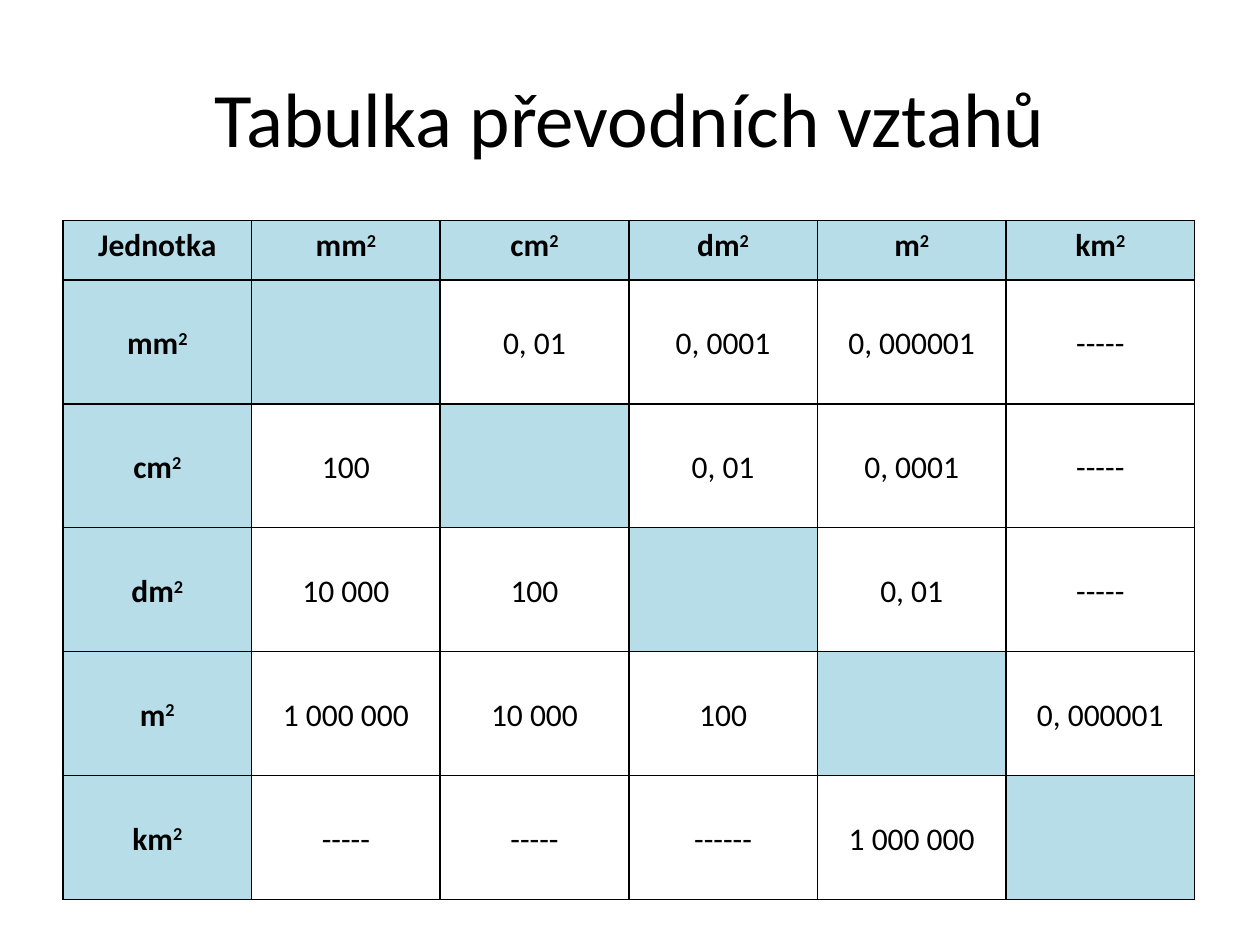
import pptx
import pptx.dml.color
import pptx.enum.text
import pptx.oxml.ns
import pptx.util
from lxml import etree

Pt = pptx.util.Pt
ANCHOR = pptx.enum.text.MSO_ANCHOR
CENTER = pptx.enum.text.PP_ALIGN.CENTER

UNITS = ["mm", "cm", "dm", "m", "km"]
CONVERSIONS = [
    ["", "0, 01", "0, 0001", "0, 000001", "-----"],
    ["100", "", "0, 01", "0, 0001", "-----"],
    ["10 000", "100", "", "0, 01", "-----"],
    ["1 000 000", "10 000", "100", "", "0, 000001"],
    ["-----", "-----", "------", "1 000 000", ""],
]


def color(value):
    return pptx.dml.color.RGBColor.from_string(value)


class SlideBuilder:
    font = "Calibri"
    ink = "000000"
    accent = "B7DEE8"
    title_size = 44
    table_size = 18

    def __init__(self, page):
        self.page = page

    def label(self, para, text, size, bold=False, superscript=""):
        para.alignment = CENTER
        para.font.name = self.font
        para.font.size = Pt(size)
        para.font.bold = bold
        para.font.color.rgb = color(self.ink)
        para.add_run().text = text
        if superscript:
            span = para.add_run()
            span.text = superscript
            span._r.get_or_add_rPr().set("baseline", "30000")

    def title(self, text, left, top, width, height):
        box = self.page.shapes.add_textbox(Pt(left), Pt(top), Pt(width), Pt(height))
        frame = box.text_frame
        frame.word_wrap = True
        frame.vertical_anchor = ANCHOR.MIDDLE
        self.label(frame.paragraphs[0], text, self.title_size)

    def borders(self, cell):
        properties = cell._tc.get_or_add_tcPr()
        qn = pptx.oxml.ns.qn
        for side in ("a:lnL", "a:lnR", "a:lnT", "a:lnB"):
            line = etree.SubElement(properties, qn(side), w=str(Pt(1)))
            fill = etree.SubElement(line, qn("a:solidFill"))
            etree.SubElement(fill, qn("a:srgbClr"), val=self.ink)

    def cell(self, cell, text, shaded, bold, superscript, top_margin):
        self.borders(cell)
        if shaded:
            cell.fill.solid()
            cell.fill.fore_color.rgb = color(self.accent)
        else:
            cell.fill.background()
        cell.margin_top = Pt(top_margin)
        if text:
            para = cell.text_frame.paragraphs[0]
            self.label(para, text, self.table_size, bold, superscript)

    def conversion_table(self, left, top, column_width, header_height, row_height):
        count = len(UNITS) + 1
        height = header_height + row_height * len(UNITS)
        frame = self.page.shapes.add_table(
            count, count, Pt(left), Pt(top), Pt(column_width * count), Pt(height))
        table = frame.table
        table.first_row = False
        table.horz_banding = False
        for column in table.columns:
            column.width = Pt(column_width)
        labels = ["Jednotka"] + UNITS
        rows = [labels] + [[unit] + values for unit, values in zip(UNITS, CONVERSIONS)]
        for i, values in enumerate(rows):
            table.rows[i].height = Pt(row_height if i else header_height)
            for j, text in enumerate(values):
                heading = i == 0 or j == 0
                self.cell(
                    table.cell(i, j), text,
                    shaded=heading or i == j,
                    bold=heading,
                    superscript="2" if heading and i + j else "",
                    top_margin=25.6 if i else 3.6)


def main():
    deck = pptx.Presentation()
    deck.slide_width, deck.slide_height = Pt(720), Pt(540)
    builder = SlideBuilder(deck.slides.add_slide(deck.slide_layouts[6]))
    builder.title("Tabulka převodních vztahů", 36, 21.6, 648, 90)
    builder.conversion_table(36, 126, 107.8, 34, 70.8)
    deck.save("out.pptx")


if __name__ == "__main__":
    main()
